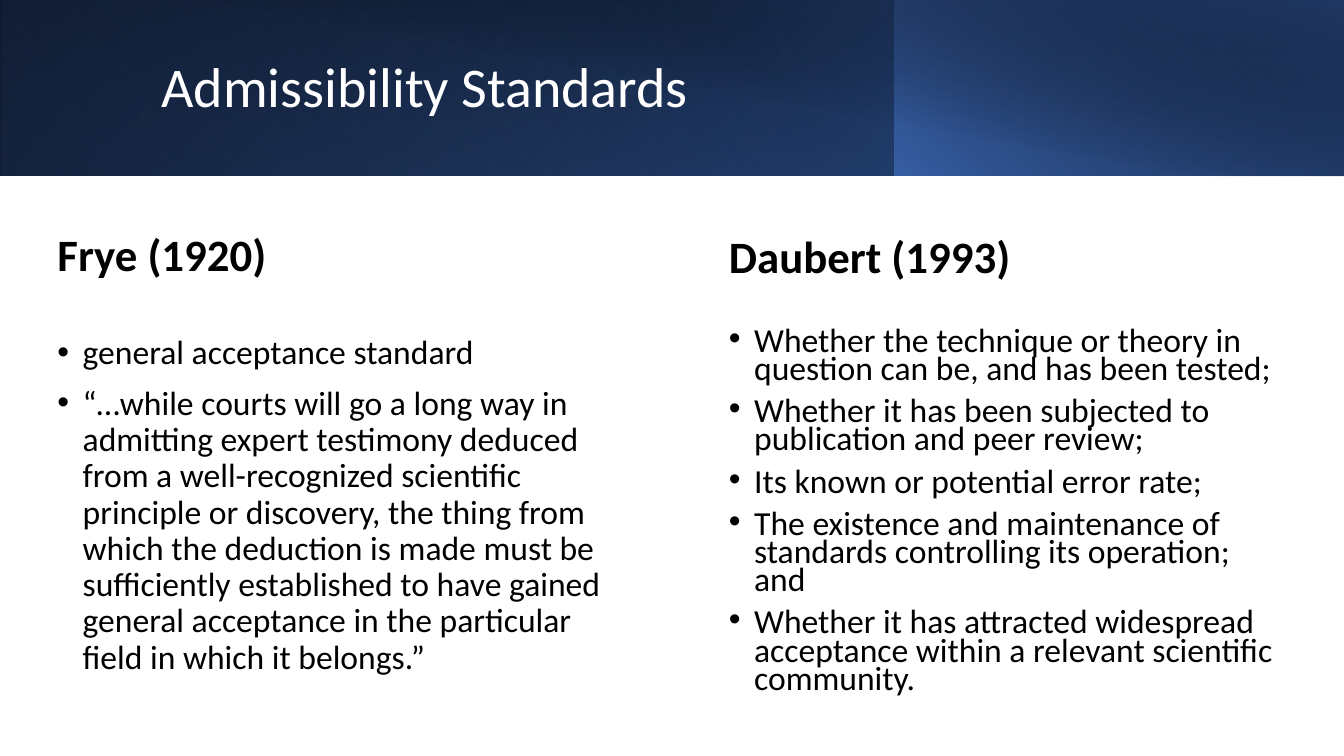
import pptx
import pptx.util
import pptx.dml.color
import pptx.enum.shapes
import pptx.enum.text
import pptx.oxml
import pptx.oxml.ns
from pptx.util import Inches

BLACK, WHITE, NAVY, BLUE = "000000", "FFFFFF", "203864", "4472C4"


def color(value):
    return pptx.dml.color.RGBColor.from_string(value)


def write(paragraph, text, size=24, fill=BLACK, bold=False, spacing=0.9, before=0, bullet=False):
    """Fill a paragraph, with or without a hanging bullet."""
    properties = paragraph._p.get_or_add_pPr()
    indent = Inches(0.25) if bullet else 0
    properties.set("marL", str(indent))
    properties.set("indent", str(-indent))
    mark = pptx.oxml.parse_xml(
        f'<a:{"buChar" if bullet else "buNone"} {pptx.oxml.ns.nsdecls("a")}/>')
    if bullet:
        mark.set("char", "•")
    properties.append(mark)
    paragraph.alignment = pptx.enum.text.PP_ALIGN.LEFT
    paragraph.line_spacing = spacing
    paragraph.space_before = pptx.util.Pt(before)
    run = paragraph.add_run()
    run.text = text
    run.font.name = "Calibri"
    run.font.size = pptx.util.Pt(size)
    run.font.bold = bold
    run.font.color.rgb = color(fill)


presentation = pptx.Presentation()
presentation.slide_width = Inches(13.33)
presentation.slide_height = Inches(7.5)
slide = presentation.slides.add_slide(presentation.slide_layouts.get_by_name("Two Content"))
title, left_body, right_body = slide.placeholders

# Banner layers: left, width, height, flipped, rotation, clockwise angle,
# then two stops of position, colour and opacity percent
banner_layers = [
    (0, 13.33, 1.74, True, 0, 140, [(0, BLACK, 100), (1, "2F5597", 100)]),
    (0, 8.88, 1.74, True, 180, 230, [(0.2, BLUE, 0), (1, NAVY, 55)]),
    (8.87, 4.46, 1.74, True, 0, 220, [(0, BLUE, 66), (1, BLACK, 30)]),
    (0.5, 12.83, 1.75, False, 0, 280, [(0.5, BLACK, 0), (0.99, NAVY, 52)]),
]
for index, (left, width, height, flipped, rotation, angle, stops) in enumerate(banner_layers):
    shape = slide.shapes.add_shape(
        pptx.enum.shapes.MSO_SHAPE.RECTANGLE, Inches(left), 0, Inches(width), Inches(height))
    shape.shadow.inherit = False
    shape.line.fill.background()
    shape.rotation = rotation
    if flipped:
        shape._element.spPr.xfrm.set("flipH", "1")
    shape.fill.gradient()
    shape.fill.gradient_angle = 360 - angle
    for stop, (position, value, opacity) in zip(shape.fill.gradient_stops, stops):
        stop.position = position
        stop.color.rgb = color(value)
    stop_colors = shape._element.spPr.iter(pptx.oxml.ns.qn("a:srgbClr"))
    for stop_color, (position, value, opacity) in zip(stop_colors, stops):
        if opacity < 100:
            stop_color.append(pptx.oxml.parse_xml(
                f'<a:alpha {pptx.oxml.ns.nsdecls("a")} val="{opacity * 1000}"/>'))
    # Keep the banner behind the title and lists
    slide.shapes._spTree.insert(2 + index, shape._element)

title.left, title.top = Inches(1.5), Inches(0.32)
title.width, title.height = Inches(10.82), Inches(1.13)
title.text_frame.vertical_anchor = pptx.enum.text.MSO_ANCHOR.MIDDLE
title.text_frame.auto_size = pptx.enum.text.MSO_AUTO_SIZE.NONE
write(title.text_frame.paragraphs[0], "Admissibility Standards", size=40, fill=WHITE)

# Columns: placeholder, left, top inset, line spacing, gap under heading, heading, points
columns = [
    (left_body, 0.47, 0.21, 0.9, 39, "Frye (1920)", [
        "general acceptance standard",
        "“…while courts will go a long way in admitting expert testimony deduced from a "
        "well-recognized scientific principle or discovery, the thing from which the deduction "
        "is made must be sufficiently established to have gained general acceptance in the "
        "particular field in which it belongs.”",
    ]),
    (right_body, 7.13, 0.31, 0.7, 35, "Daubert (1993)", [
        "Whether the technique or theory in question can be, and has been tested;",
        "Whether it has been subjected to publication and peer review;",
        "Its known or potential error rate;",
        "The existence and maintenance of standards controlling its operation; and",
        "Whether it has attracted widespread acceptance within a relevant scientific community.",
    ]),
]
for body, left, inset, spacing, gap, heading, points in columns:
    body.left, body.top = Inches(left), Inches(2.1)
    body.width, body.height = Inches(5.71), Inches(5.19)
    frame = body.text_frame
    frame.margin_top = Inches(inset)
    frame.vertical_anchor = pptx.enum.text.MSO_ANCHOR.TOP
    frame.auto_size = pptx.enum.text.MSO_AUTO_SIZE.NONE
    write(frame.paragraphs[0], heading, size=32, bold=True, spacing=spacing)
    for number, point in enumerate(points):
        write(frame.add_paragraph(), point, spacing=spacing,
              before=10 if number else gap, bullet=True)

presentation.save("out.pptx")
